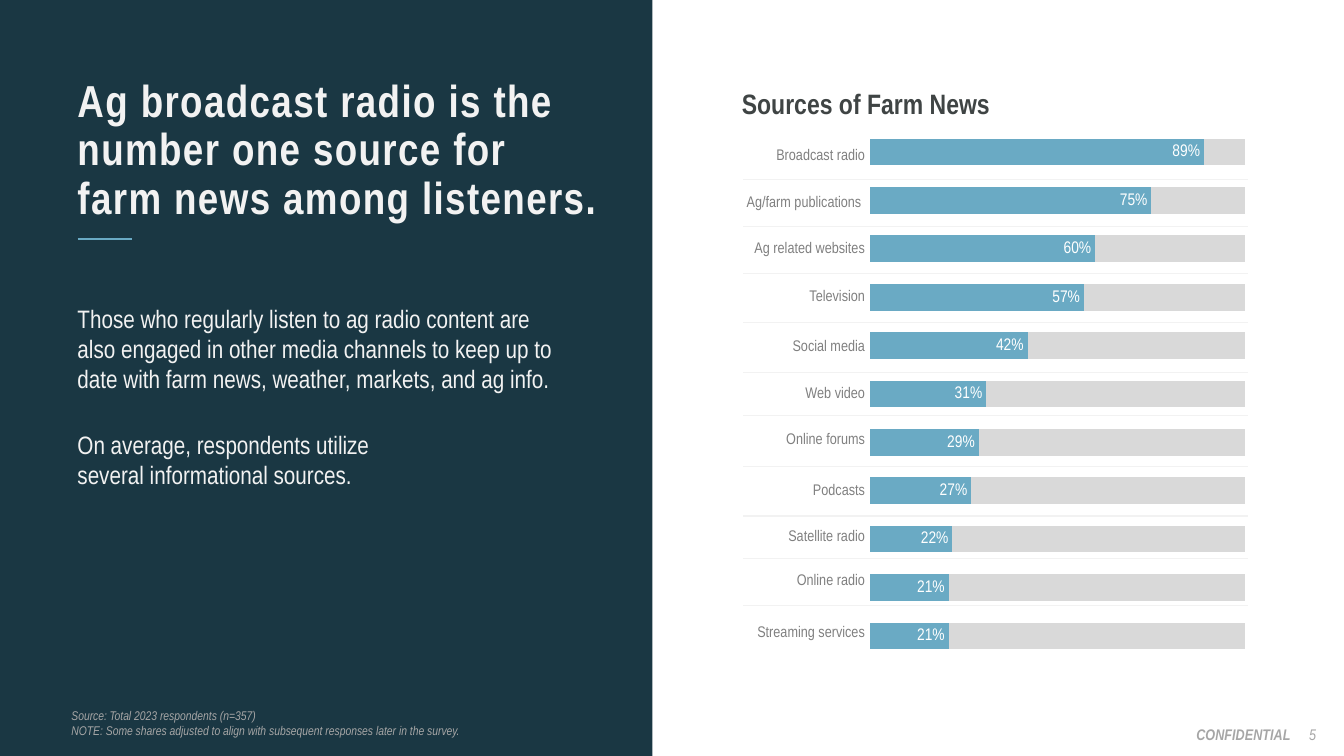
from lxml import etree
from pptx import Presentation
from pptx.chart.data import CategoryChartData
from pptx.dml.color import RGBColor
from pptx.enum import chart as charts, shapes, text
from pptx.oxml import parse_xml
from pptx.oxml.ns import nsdecls, qn
from pptx.util import Inches, Pt

FONT = "Arial Narrow"
NAVY, BLUE, PALE, GREY, DARK = "1A3743", "6AAAC4", "F2F2F2", "A6A6A6", "3F4444"
LEFT, RIGHT = text.PP_ALIGN.LEFT, text.PP_ALIGN.RIGHT
TOP, MIDDLE = text.MSO_ANCHOR.TOP, text.MSO_ANCHOR.MIDDLE


def rgb(color):
    return RGBColor.from_string(color)


def add_text(box, lines, size, color, bold=False, italic=False, align=LEFT, anchor=TOP):
    """Add a wrapping text box at box = (left, top, width, height) in inches."""
    frame = slide.shapes.add_textbox(*map(Inches, box)).text_frame
    frame.word_wrap = True
    frame.vertical_anchor = anchor
    frame.text = lines
    for paragraph in frame.paragraphs:
        paragraph.alignment = align
        font = paragraph.font
        font.name, font.size, font.bold, font.italic = FONT, Pt(size), bold, italic
        font.color.rgb = rgb(color)
    return frame.paragraphs[0]


prs = Presentation()
prs.slide_width, prs.slide_height = Inches(13.33), Inches(7.5)
slide = prs.slides.add_slide(prs.slide_layouts[6])

# Left panel and footer
panel = slide.shapes.add_shape(shapes.MSO_SHAPE.RECTANGLE, 0, 0, Inches(6.47), Inches(7.5))
panel.shadow.inherit = False
panel.fill.solid()
panel.fill.fore_color.rgb = rgb(NAVY)
panel.line.fill.background()

add_text((11.43, 7.14, 1.47, 0.29), "CONFIDENTIAL", 11, GREY, bold=True, italic=True, align=RIGHT)
add_text((12.82, 7.09, 0.4, 0.4), "5", 11, GREY, italic=True,
         align=text.PP_ALIGN.CENTER, anchor=MIDDLE)

headline = add_text((0.67, 0.73, 5.42, 0.93),
                    "Ag broadcast radio is the number one source for farm news among listeners.",
                    32, PALE, bold=True)
headline.line_spacing = 0.9
headline.runs[0]._r.get_or_add_rPr().set("spc", "100")

add_text((0.67, 2.96, 5.09, 1.01),
         "Those who regularly listen to ag radio content are also engaged in other media "
         "channels to keep up to date with farm news, weather, markets, and ag info.", 18, PALE)

# Shares of each source
sources = [
    ("Broadcast radio", 0.89, 0.46),
    ("Ag/farm publications ", 0.75, 0.47),
    ("Ag related websites", 0.60, 0.46),
    ("Television", 0.57, 0.49),
    ("Social media", 0.42, 0.50),
    ("Web video", 0.31, 0.42),
    ("Online forums", 0.29, 0.51),
    ("Podcasts", 0.27, 0.49),
    ("Satellite radio", 0.22, 0.42),
    ("Online radio", 0.21, 0.47),
    ("Streaming services", 0.21, 0.55),
]
shares = CategoryChartData(number_format="0%")
shares.categories = [str(rank + 1) for rank in range(len(sources))]
shares.add_series("Series 1", [share for _, share, _ in sources])
shares.add_series("Series 2", [round(1 - share, 2) for _, share, _ in sources])
chart = slide.shapes.add_chart(charts.XL_CHART_TYPE.BAR_STACKED_100, Inches(8.55), Inches(1.16),
                               Inches(3.88), Inches(5.5), shares).chart
chart.has_legend = chart.has_title = False
chart.font.name, chart.font.size = FONT, Pt(12)
chart.font.color.rgb = rgb(DARK)
chart.category_axis.reverse_order = True
chart.value_axis.minimum_scale, chart.value_axis.maximum_scale = 0, 1
chart.value_axis.has_major_gridlines = False
chart.category_axis.visible = chart.value_axis.visible = False

bars = chart.plots[0]
bars.gap_width, bars.overlap, bars.vary_by_categories = 81, 100, False
for series, color in zip(bars.series, (BLUE, "D9D9D9")):
    series.format.fill.solid()
    series.format.fill.fore_color.rgb = rgb(color)
labels = bars.series[0].data_labels
labels.show_value = True
labels.number_format, labels.number_format_is_linked = "0%", False
labels.position = charts.XL_LABEL_POSITION.INSIDE_END
labels.font.name, labels.font.size = FONT, Pt(12)
labels.font.color.rgb = rgb("FFFFFF")

plot_area = chart._chartSpace.chart.plotArea
for layout in plot_area.findall(qn("c:layout")):
    plot_area.remove(layout)
plot_area.insert(0, parse_xml(
    f'<c:layout {nsdecls("c")}><c:manualLayout><c:layoutTarget val="inner"/>'
    '<c:xMode val="edge"/><c:yMode val="edge"/><c:x val="0.02"/><c:y val="0.02"/>'
    '<c:w val="0.96"/><c:h val="0.96"/></c:manualLayout></c:layout>'))

# Source names, with rules between the rows
table = slide.shapes.add_table(len(sources), 2, Inches(7.37), Inches(1.32),
                               Inches(5.01), Inches(5.23)).table
table.first_row = table.horz_banding = False
NO_STYLE = "{2D5ABB26-0587-4C30-8999-92F81FD0307C}"
table._tbl.tblPr.find(qn("a:tableStyleId")).text = NO_STYLE
table.columns[0].width, table.columns[1].width = Inches(1.22), Inches(3.79)
for row, (source, _, height) in enumerate(sources):
    table.rows[row].height = Inches(height)
    for column, wording in enumerate((source, "")):
        cell = table.cell(row, column)
        cell.margin_left = cell.margin_right = Inches(0.01)
        cell.margin_top = cell.margin_bottom = 0
        cell.vertical_anchor = MIDDLE
        cell.text = wording
        label = cell.text_frame.paragraphs[0]
        label.alignment = RIGHT
        label.font.name, label.font.size = FONT, Pt(11)
        label.font.color.rgb = rgb("808080")
        edges = [("a:lnT", row > 0), ("a:lnB", row < len(sources) - 1)]
        for edge in [tag for tag, ruled in edges if ruled]:
            rule = etree.SubElement(cell._tc.get_or_add_tcPr(), qn(edge), w="12700")
            paint = etree.SubElement(rule, qn("a:solidFill"))
            etree.SubElement(paint, qn("a:srgbClr"), val=PALE)
        cell.fill.background()

add_text((7.26, 0.81, 5.09, 0.44), "Sources of Farm News", 20, DARK, bold=True)
add_text((0.61, 6.97, 5.99, 0.4),
         "Source: Total 2023 respondents (n=357)\n"
         "NOTE: Some shares adjusted to align with subsequent responses later in the survey.",
         9, GREY, italic=True, anchor=MIDDLE)

accent = slide.shapes.add_connector(shapes.MSO_CONNECTOR.STRAIGHT, Inches(0.77), Inches(2.37),
                                    Inches(1.31), Inches(2.37))
accent.line.color.rgb = rgb(BLUE)
accent.line.width = Pt(1.5)
etree.SubElement(accent._element.spPr, qn("a:effectLst"))

add_text((0.67, 4.21, 3.67, 0.71),
         "On average, respondents utilize several informational sources.", 18, PALE)

prs.save("out.pptx")
